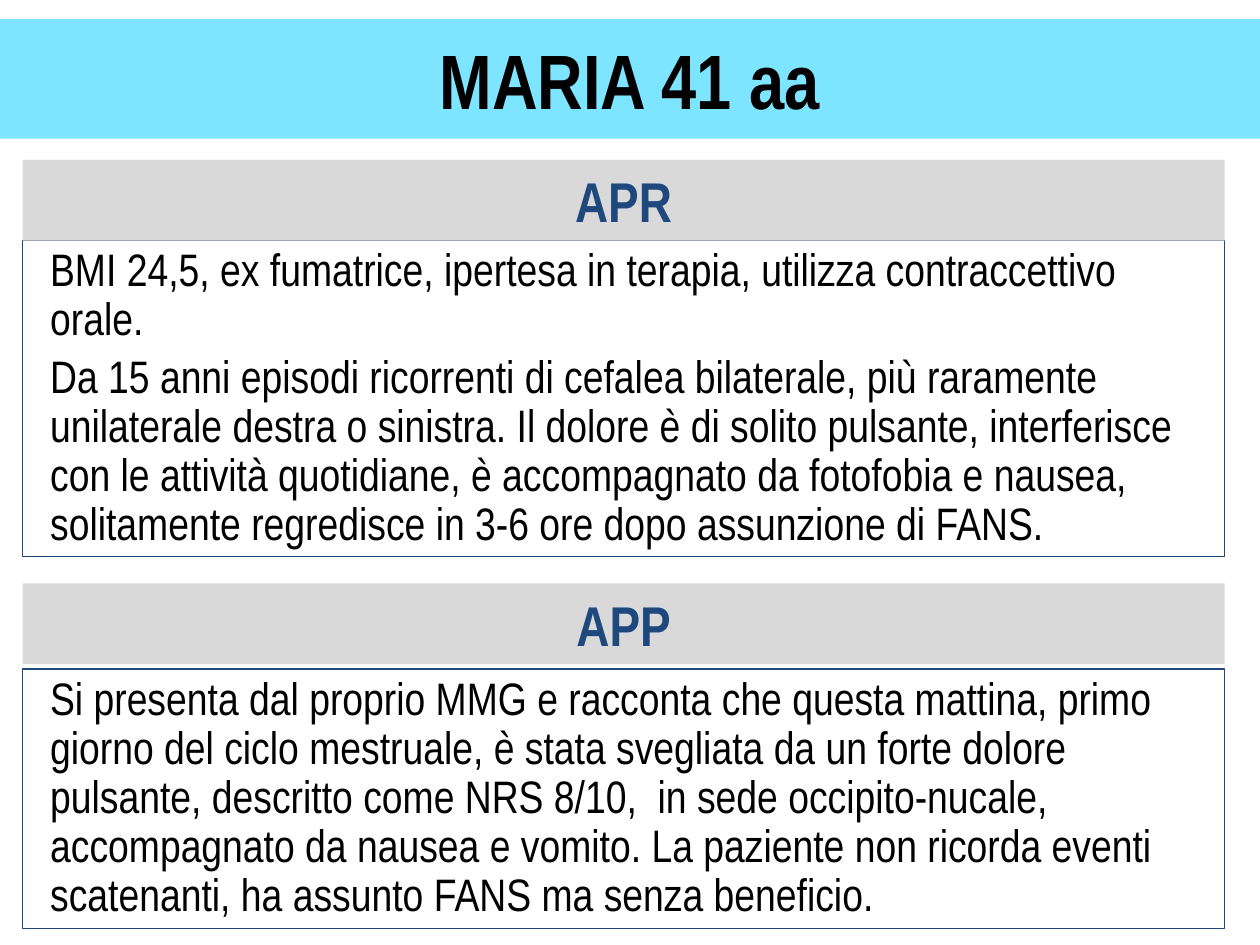
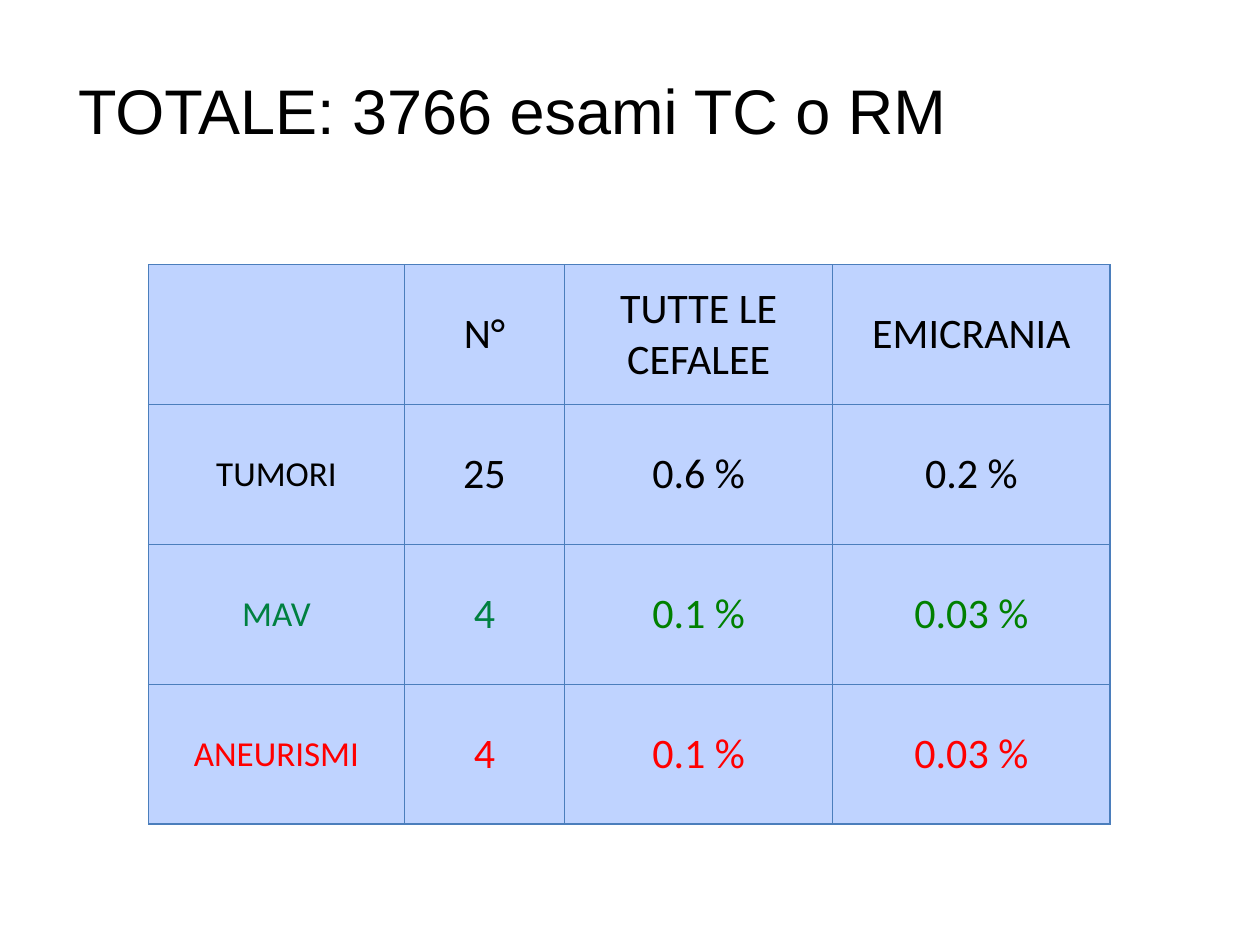
import pptx
import pptx.util
import pptx.dml.color
import pptx.enum.shapes
import pptx.enum.text
import pptx.oxml
import pptx.oxml.ns
import lxml.etree

Inches = pptx.util.Inches
Pt = pptx.util.Pt
ALIGN = pptx.enum.text.PP_ALIGN
ANCHOR = pptx.enum.text.MSO_ANCHOR
qn = pptx.oxml.ns.qn

COLORS = {
    "black": "000000", "navy": "1F497D", "cyan": "00CCFF", "gray": "D9D9D9",
    "cell": "BFD3FF", "border": "4B7EBC", "teal": "008040", "green": "008000",
    "red": "FF0000",
}
NARROW = "Arial Narrow"


def rgb(name):
    return pptx.dml.color.RGBColor.from_string(COLORS[name])


def write(frame, text, font=NARROW, size=26, color="black", bold=False,
          align=ALIGN.CENTER, spacing=1.0, before=0, indent=0):
    frame.word_wrap = True
    frame.vertical_anchor = ANCHOR.MIDDLE
    for i, line in enumerate(text.split("\n")):
        paragraph = frame.paragraphs[0] if i == 0 else frame.add_paragraph()
        paragraph.alignment = align
        paragraph.line_spacing = spacing
        paragraph.space_before = Pt(before)
        properties = paragraph._p.get_or_add_pPr()
        properties.set("marL", str(Inches(indent)))
        properties.set("indent", "0")
        run = paragraph.add_run()
        run.text = line
        run.font.name = font
        run.font.size = Pt(size)
        run.font.bold = bold
        run.font.color.rgb = rgb(color)


deck = pptx.Presentation()
deck.slide_width = Inches(10)
deck.slide_height = Inches(7.5)
title_only = deck.slide_layouts[5]

case = deck.slides.add_slide(title_only)
case_title = case.shapes.title
case_title.left, case_title.top = Inches(0), Inches(0.15)
case_title.width, case_title.height = Inches(10), Inches(0.95)
case_title.fill.solid()
case_title.fill.fore_color.rgb = rgb("cyan")
band_color = case_title._element.spPr.find(qn("a:solidFill"))[0]
lxml.etree.SubElement(band_color, qn("a:alpha"), val="51000")
case_title.text_frame.auto_size = pptx.enum.text.MSO_AUTO_SIZE.NONE
write(case_title.text_frame, "MARIA 41 aa", size=44, bold=True)

sections = [
    ("APR", 1.27, 1.91, 2.51,
     "BMI 24,5, ex fumatrice, ipertesa in terapia, utilizza contraccettivo orale.\n"
     "Da 15 anni episodi ricorrenti di cefalea bilaterale, più raramente "
     "unilaterale destra o sinistra. Il dolore è di solito pulsante, interferisce "
     "con le attività quotidiane, è accompagnato da fotofobia e nausea, "
     "solitamente regredisce in 3-6 ore dopo assunzione di FANS."),
    ("APP", 4.63, 5.31, 2.06,
     "Si presenta dal proprio MMG e racconta che questa mattina, primo giorno del "
     "ciclo mestruale, è stata svegliata da un forte dolore pulsante, descritto "
     "come NRS 8/10,  in sede occipito-nucale, accompagnato da nausea e vomito. "
     "La paziente non ricorda eventi scatenanti, ha assunto FANS ma senza "
     "beneficio."),
]
for heading, heading_top, history_top, history_height, history in sections:
    for part, top, height in (("history", history_top, history_height),
                              ("heading", heading_top, 0.64)):
        box = case.shapes.add_shape(
            pptx.enum.shapes.MSO_SHAPE.RECTANGLE,
            Inches(0.18), Inches(top), Inches(9.54), Inches(height))
        box.shadow.inherit = False
        if part == "heading":
            box.fill.solid()
            box.fill.fore_color.rgb = rgb("gray")
            box.line.fill.background()
            write(box.text_frame, heading, size=32, color="navy", bold=True)
        else:
            box.fill.background()
            box.line.color.rgb = rgb("navy")
            box.line.width = Pt(0.75)
            write(box.text_frame, history, align=ALIGN.LEFT, spacing=0.9,
                  before=5.2, indent=0.12)

exams = deck.slides.add_slide(title_only)
exams_title = exams.shapes.title
exams_title.left, exams_title.top = Inches(0.37), Inches(0.3)
exams_title.width, exams_title.height = Inches(9.26), Inches(1.08)
exams_title.text_frame.auto_size = pptx.enum.text.MSO_AUTO_SIZE.NONE
exams_title.text_frame.margin_left = Inches(0.25)
exams_title.text_frame.margin_top = Inches(0.1)
write(exams_title.text_frame, "TOTALE: 3766 esami TC o RM", font="Arial",
      size=36, align=ALIGN.LEFT)

findings = [
    ("", "N°", "TUTTE LE CEFALEE", "EMICRANIA"),
    ("TUMORI", "25", "0.6 %", "0.2 %"),
    ("MAV", "4", "0.1 %", "0.03 %"),
    ("ANEURISMI", "4", "0.1 %", "0.03 %"),
]
row_colors = [("black", "black"), ("black", "black"), ("teal", "green"), ("red", "red")]
findings_table = exams.shapes.add_table(
    4, 4, Inches(1.18), Inches(2.1), Inches(7.64), Inches(4.44)).table
findings_table.first_row = False
findings_table.horz_banding = False
for column, width in zip(findings_table.columns, (2.03, 1.27, 2.13, 2.2)):
    column.width = Inches(width)
for r, values in enumerate(findings):
    findings_table.rows[r].height = Inches(1.11)
    for c, value in enumerate(values):
        cell = findings_table.cell(r, c)
        cell.vertical_anchor = ANCHOR.MIDDLE
        cell_properties = cell._tc.get_or_add_tcPr()
        for side in ("a:lnL", "a:lnR", "a:lnT", "a:lnB"):
            edge = lxml.etree.SubElement(cell_properties, qn(side), w=str(Pt(0.75)))
            edge_fill = lxml.etree.SubElement(edge, qn("a:solidFill"))
            lxml.etree.SubElement(edge_fill, qn("a:srgbClr"), val=COLORS["border"])
        cell.fill.solid()
        cell.fill.fore_color.rgb = rgb("cell")
        if value:
            write(cell.text_frame, value, font="Calibri",
                  size=20 if c == 0 else 24, color=row_colors[r][c // 2],
                  before=4.8)
            cell.vertical_anchor = ANCHOR.MIDDLE

deck.save("out.pptx")
